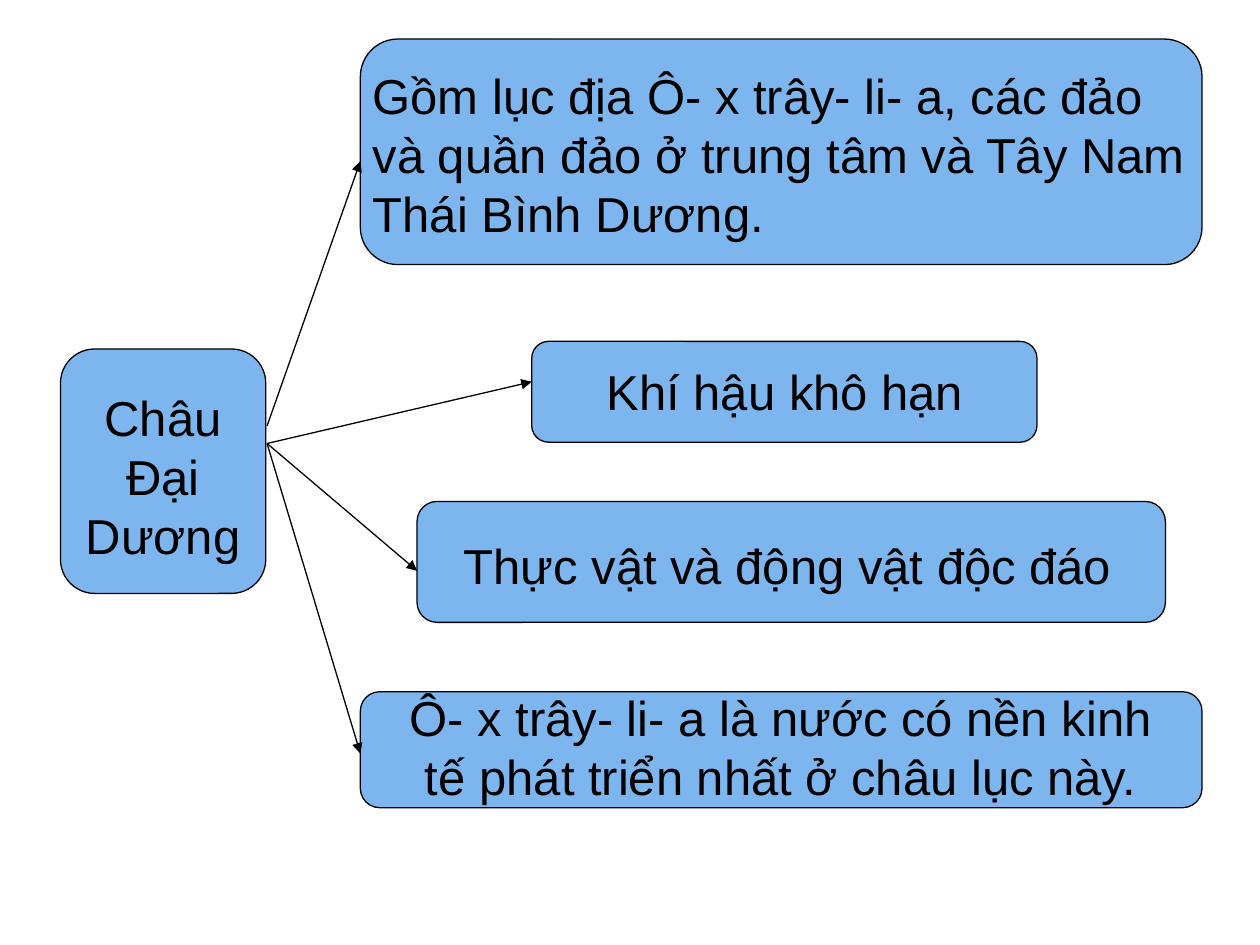
from lxml import etree
from pptx import Presentation
from pptx.dml.color import RGBColor
from pptx.enum.shapes import MSO_CONNECTOR, MSO_SHAPE
from pptx.enum.text import PP_ALIGN
from pptx.oxml.ns import qn
from pptx.util import Inches, Pt

ROUND = MSO_SHAPE.ROUNDED_RECTANGLE
LINE = MSO_CONNECTOR.STRAIGHT
LEFT, MID = PP_ALIGN.LEFT, PP_ALIGN.CENTER
BLUE, BLACK = "7DB6EF", "000000"


def paint(hue, target):
    target.rgb = RGBColor.from_string(hue)


def edge(line):
    """Give a shape or arrow its thin black line."""
    line.fill.solid()
    paint(BLACK, line.color)
    line.width = Pt(0.75)


deck = Presentation()
deck.slide_width, deck.slide_height = Inches(10), Inches(7.5)
slide = deck.slides.add_slide(deck.slide_layouts[6])
shapes = slide.shapes

# Box place, text place, alignment, wording: the topic, then its branches
nodes = [
    ((0.48, 2.77, 1.63, 1.94), (0.48, 3.03, 1.63, 1.5), MID,
     "Châu Đại Dương"),
    ((2.86, 0.31, 6.68, 1.79), (2.86, 0.47, 6.68, 1.5), LEFT,
     "Gồm lục địa Ô- x trây- li- a, các đảo và quần đảo ở trung tâm "
     "và Tây Nam Thái Bình Dương."),
    ((4.22, 2.71, 4.01, 0.8), (4.38, 2.82, 3.7, 0.57), MID,
     "Khí hậu khô hạn"),
    ((3.31, 3.98, 5.94, 0.96), (3.28, 4.2, 5.94, 0.57), MID,
     "Thực vật và động vật độc đáo"),
    ((2.86, 5.49, 6.68, 0.92), (3.14, 5.41, 6.11, 1.5), MID,
     "Ô- x trây- li- a là nước có nền kinh tế phát triển nhất "
     "ở châu lục này."),
]
for place, area, align, words in nodes:
    box = shapes.add_shape(ROUND, *map(Inches, place))
    box.shadow.inherit = False
    box.fill.solid()
    paint(BLUE, box.fill.fore_color)
    edge(box.line)

    frame = shapes.add_textbox(*map(Inches, area)).text_frame
    frame.word_wrap = True
    para = frame.paragraphs[0]
    para.text = words
    para.alignment = align
    para.font.name = "Arial"
    para.font.size = Pt(28)
    paint(BLACK, para.font.color)

# Arrows from the topic's right edge to each branch's left edge
starts = [3.38, 3.52, 3.52, 3.52]
ends = [1.28, 3.03, 4.53, 5.98]
for (place, *_), start, end in zip(nodes[1:], starts, ends):
    points = 2.12, start, place[0], end
    arrow = shapes.add_connector(LINE, *map(Inches, points))
    edge(arrow.line)
    props = arrow.element.spPr
    etree.SubElement(props.find(qn("a:ln")), qn("a:tailEnd"), type="triangle")
    etree.SubElement(props, qn("a:effectLst"))

deck.save("out.pptx")
